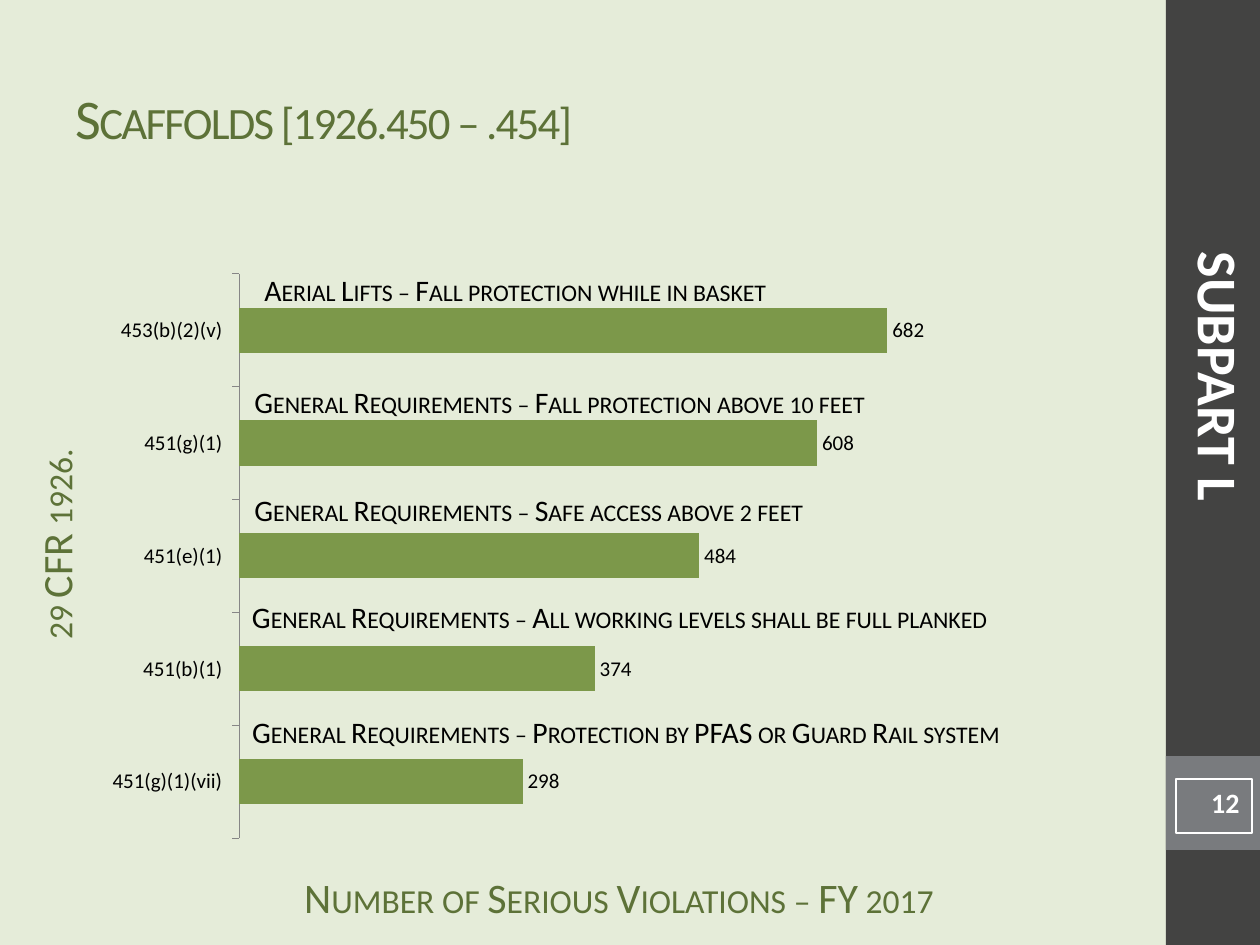
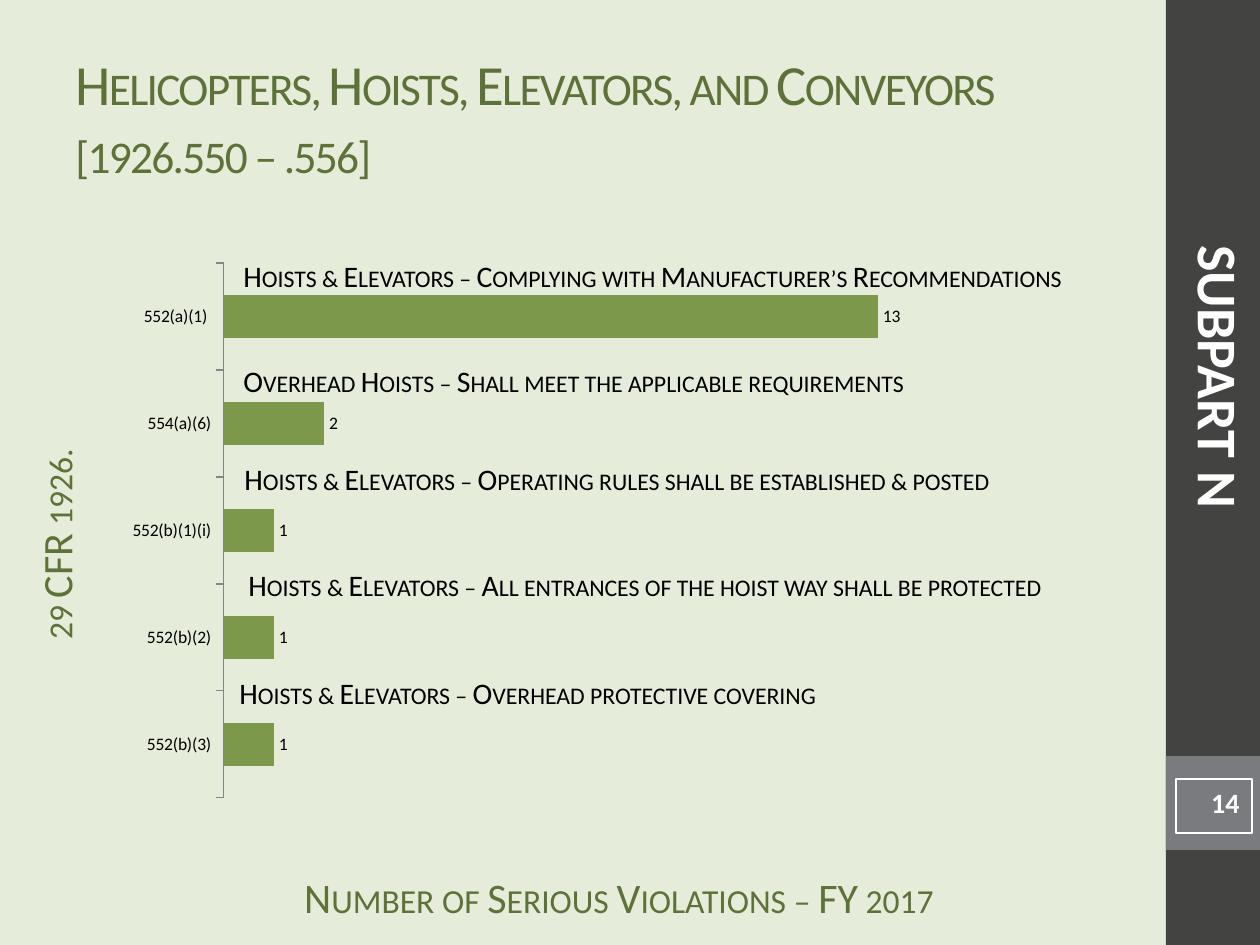
import pptx
import pptx.util
import pptx.dml.color
import pptx.chart.data
import pptx.enum.chart
import pptx.enum.shapes
import pptx.enum.text

SCALE = 914400 / 126
COLOURS = {
    "background": "E5ECD9", "band": "434342", "square": "797B7E", "heading": "5D7238",
    "bar": "7C984A", "axis": "868686", "black": "000000", "white": "FFFFFF",
}
RGB = {name: pptx.dml.color.RGBColor.from_string(code) for name, code in COLOURS.items()}
ALIGN = pptx.enum.text.PP_ALIGN
FIT = pptx.enum.text.MSO_AUTO_SIZE.SHAPE_TO_FIT_TEXT
MIDDLE = pptx.enum.text.MSO_ANCHOR.MIDDLE
TOP = pptx.enum.text.MSO_ANCHOR.TOP
RECTANGLE = pptx.enum.shapes.MSO_SHAPE.RECTANGLE

SMALL_CAPS = {"cap": "small"}
TITLE = {"colour": "heading", "frame": {"vertical_anchor": MIDDLE},
         "run": {"cap": "small", "spc": "-100"}}
AXIS_TITLE = {"size": 24, "colour": "heading", "align": ALIGN.CENTER,
              "frame": {"margin_top": 0}, "run": SMALL_CAPS}
SUBPART = {"size": 32, "colour": "white", "align": ALIGN.CENTER, "bold": True,
           "frame": {"auto_size": FIT}}
NUMBER = {"size": 16, "colour": "white", "align": ALIGN.RIGHT, "bold": True,
          "frame": {"vertical_anchor": TOP}}
CAPTION = {"size": 17, "colour": "black", "frame": {"auto_size": FIT}, "run": SMALL_CAPS}
FLUSH = dict.fromkeys(["margin_left", "margin_top", "margin_right", "margin_bottom"], 0)
FLUSH_CAPTION = CAPTION | {"frame": FLUSH}

SLIDES = [
    {
        "title": "Scaffolds [1926.450 – .454]", "title_size": 32,
        "subpart": "SUBPART L", "number": "12",
        "chart": (94, 262, 924, 588), "label_size": 12, "maximum": 800,
        "bars": {"451(g)(1)(vii) ": 298, "451(b)(1) ": 374, "451(e)(1) ": 484,
                 "451(g)(1) ": 608, "453(b)(2)(v) ": 682},
        "captions": [
            ("Aerial Lifts – Fall protection while in basket", (252, 266, 544, 49), CAPTION),
            ("General Requirements – Fall protection above 10 feet", (242, 378, 660, 49), CAPTION),
            ("General Requirements – Safe access above 2 feet", (242, 486, 597, 49), CAPTION),
            ("General Requirements – All working levels shall be full planked",
             (252, 599, 766, 43), FLUSH_CAPTION),
            ("General Requirements – Protection by PFAS or Guard Rail system",
             (252, 714, 840, 37), FLUSH_CAPTION),
        ],
    },
    {
        "title": "Helicopters, Hoists, Elevators, and Conveyors [1926.550 – .556]",
        "title_size": 32.4, "subpart": "SUBPART N", "number": "14",
        "chart": (116, 252, 829, 557), "label_size": 10, "maximum": 14,
        "bars": {"552(b)(3)": 1, "552(b)(2)": 1, "552(b)(1)(i)": 1,
                 "554(a)(6)": 2, "552(a)(1) ": 13},
        "captions": [
            ("Hoists & Elevators – Complying with Manufacturer’s Recommendations",
             (231, 252, 872, 49), CAPTION),
            ("Overhead Hoists – Shall meet the applicable requirements",
             (231, 357, 861, 49), CAPTION),
            ("Hoists & Elevators – Operating rules shall be established & posted",
             (232, 455, 861, 49), CAPTION),
            ("Hoists & Elevators – All entrances of the hoist way shall be protected",
             (236, 561, 867, 49), CAPTION),
            ("Hoists & Elevators – Overhead protective covering", (227, 669, 840, 49), CAPTION),
        ],
    },
]


def emu(*lengths):
    return [pptx.util.Emu(round(length * SCALE)) for length in lengths]


def write(box, words, style):
    frame = box.text_frame
    frame.word_wrap = True
    for name, value in style["frame"].items():
        setattr(frame, name, value)
    para = frame.paragraphs[0]
    para.alignment = style.get("align", ALIGN.LEFT)
    span = para.add_run()
    span.text = words
    font = {"name": "Calibri", "size": pptx.util.Pt(style["size"]),
            "bold": style.get("bold", False)}
    for name, value in font.items():
        setattr(span.font, name, value)
    span.font.color.rgb = RGB[style["colour"]]
    for name, value in style.get("run", {}).items():
        span._r.get_or_add_rPr().set(name, value)


deck = pptx.Presentation()
deck.slide_width, deck.slide_height = emu(1260, 945)

for content in SLIDES:
    page = deck.slides.add_slide(deck.slide_layouts[6])
    page.background.fill.solid()
    page.background.fill.fore_color.rgb = RGB["background"]

    for colour, place in [("band", (1166, 0, 94, 945)), ("square", (1166, 756, 94, 94))]:
        block = page.shapes.add_shape(RECTANGLE, *emu(*place))
        block.shadow.inherit = False
        block.fill.solid()
        block.fill.fore_color.rgb = RGB[colour]
        block.line.fill.background()

    data = pptx.chart.data.CategoryChartData()
    data.categories = list(content["bars"])
    data.add_series("Series 1", list(content["bars"].values()))
    chart = page.shapes.add_chart(
        pptx.enum.chart.XL_CHART_TYPE.BAR_CLUSTERED, *emu(*content["chart"]), data).chart
    chart.has_legend = False
    chart.has_title = False
    plot = chart.plots[0]
    plot.gap_width = 150
    plot.vary_by_categories = False
    plot.has_data_labels = True
    labels = plot.data_labels
    labels.show_value = True
    labels.position = pptx.enum.chart.XL_LABEL_POSITION.OUTSIDE_END
    bars = plot.series[0].format.fill
    bars.solid()
    bars.fore_color.rgb = RGB["bar"]
    for font in (chart.font, labels.font, chart.category_axis.tick_labels.font):
        font.name = "Calibri"
        font.size = pptx.util.Pt(content["label_size"])
        font.color.rgb = RGB["black"]
    chart.category_axis.major_tick_mark = pptx.enum.chart.XL_TICK_MARK.OUTSIDE
    chart.category_axis.format.line.color.rgb = RGB["axis"]
    chart.category_axis.format.line.width = pptx.util.Pt(0.75)
    amounts = {"visible": False, "has_major_gridlines": False,
               "minimum_scale": 0, "maximum_scale": content["maximum"]}
    for name, value in amounts.items():
        setattr(chart.value_axis, name, value)

    number_box = page.shapes.add_shape(RECTANGLE, *emu(1176, 779, 76, 54))
    number_box.shadow.inherit = False
    number_box.fill.background()
    number_box.line.color.rgb = RGB["white"]
    number_box.line.width = pptx.util.Pt(1.5)
    write(number_box, content["number"], NUMBER)

    title_style = TITLE | {"size": content["title_size"]}
    texts = [
        (content["title"], (63, 38, 1050, 158), title_style, 0),
        ("Number of Serious Violations – FY 2017", (262, 872, 714, 42), AXIS_TITLE, 0),
        ("29 CFR 1926.", (-197, 508, 528, 73), AXIS_TITLE, 270),
        (content["subpart"], (843, 336, 753, 81), SUBPART, 90),
    ]
    texts += [(*caption, 0) for caption in content["captions"]]
    for words, place, style, turn in texts:
        box = page.shapes.add_textbox(*emu(*place))
        box.rotation = turn
        write(box, words, style)

deck.save("out.pptx")
